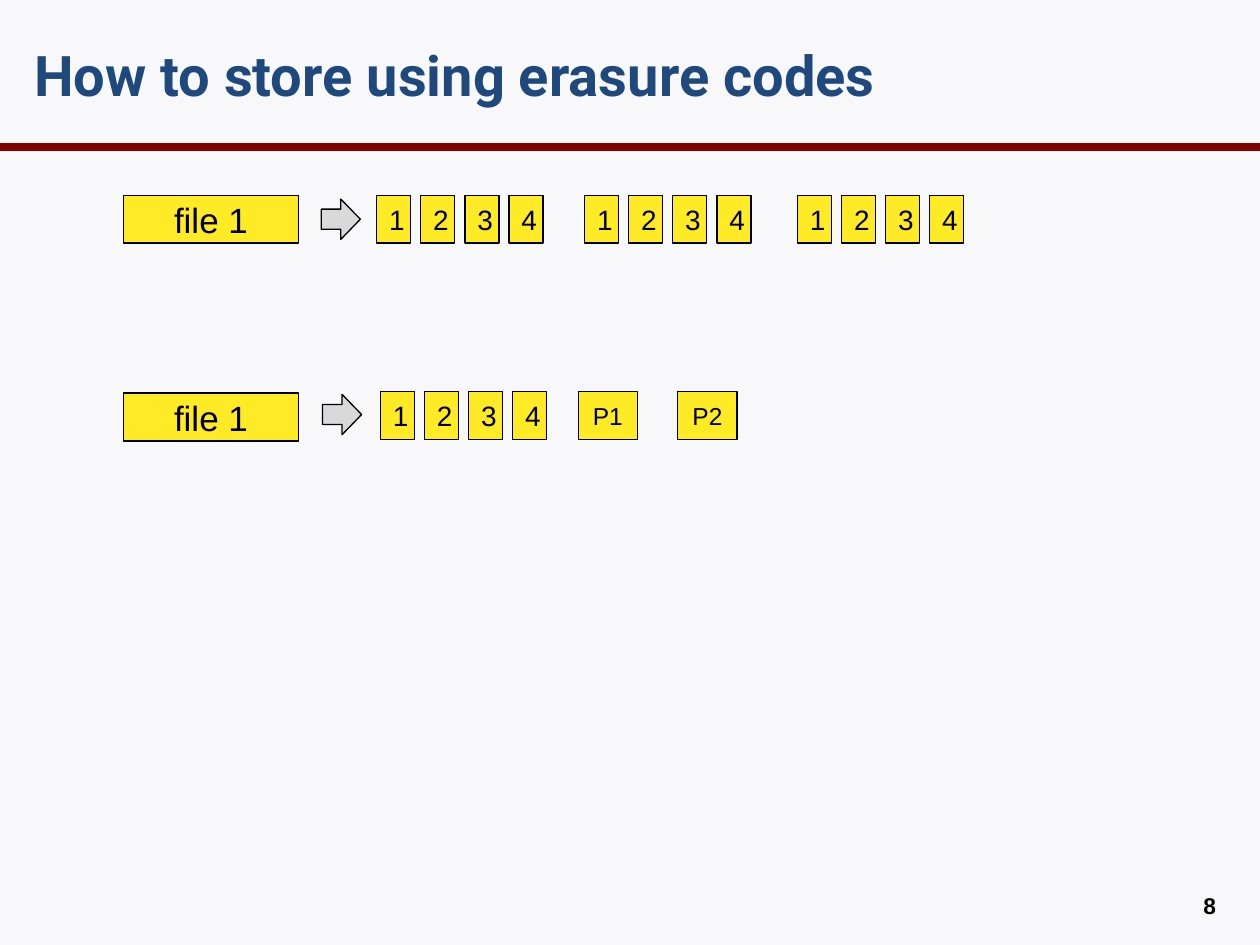
import pptx
import pptx.util
import pptx.dml.color
import pptx.enum.shapes
import pptx.enum.text
from lxml import etree
from pptx.util import Inches, Pt

MSO = pptx.enum.shapes.MSO_SHAPE
ALIGN = pptx.enum.text.PP_ALIGN
ANCHOR = pptx.enum.text.MSO_ANCHOR

TITLE = "How to store using erasure codes"
PAGE = "8"
BLOCKS = ["1", "2", "3", "4"]
# Each row: top of the file box, arrow position, block groups and parity blocks
ROWS = [
    {"file": "file 1", "top": 1.55, "arrow": (2.55, 1.58),
     "groups": [(2.99, 1.55), (4.64, 1.55), (6.33, 1.55)], "parity": []},
    {"file": "file 1", "top": 3.12, "arrow": (2.56, 3.13),
     "groups": [(3.02, 3.11)], "parity": [("P1", 4.59), ("P2", 5.38)]},
]
FILE_LEFT, FILE_W = 0.98, 1.39
BLOCK_W, BLOCK_STEP, PARITY_W, BOX_H = 0.27, 0.35, 0.47, 0.38
PARITY_TOP = 3.11
YELLOW, GREY, BLACK = "FFEA26", "D9D9D9", "000000"
NAVY, MAROON, PAPER = "1F497D", "800000", "F8F8FA"


def rgb(value):
    return pptx.dml.color.RGBColor.from_string(value)


def write(tf, text, size, color, align, font="Arial", bold=False):
    tf.text = text
    p = tf.paragraphs[0]
    p.alignment = align
    f = p.runs[0].font
    f.name, f.size, f.bold = font, Pt(size), bold
    f.color.rgb = rgb(color)


def add_shape(s, kind, left, top, width, height, fill):
    sp = s.shapes.add_shape(kind, Inches(left), Inches(top), Inches(width), Inches(height))
    sp.shadow.inherit = False
    sp.fill.solid()
    sp.fill.fore_color.rgb = rgb(fill)
    sp.line.color.rgb = rgb(BLACK)
    sp.line.width = Pt(0.75)
    return sp


def add_box(s, text, left, top, width, size):
    sp = add_shape(s, MSO.RECTANGLE, left, top, width, BOX_H, YELLOW)
    sp.text_frame.vertical_anchor = ANCHOR.MIDDLE
    write(sp.text_frame, text, size, BLACK, ALIGN.CENTER)


def add_frame(s):
    """Add the background, rule, title and page number."""
    s.background.fill.solid()
    s.background.fill.fore_color.rgb = rgb(PAPER)

    rule = s.shapes.add_connector(pptx.enum.shapes.MSO_CONNECTOR.STRAIGHT,
                                  0, Inches(1.17), Inches(10), Inches(1.17))
    rule.line.color.rgb = rgb(MAROON)
    rule.line.width = Pt(4.5)
    etree.SubElement(rule._element.spPr, pptx.oxml.ns.qn("a:effectLst"))

    title = s.shapes.title
    title.left, title.top = Inches(0.17), Inches(0.17)
    title.width, title.height = Inches(9.56), Inches(0.83)
    title.text_frame.vertical_anchor = ANCHOR.MIDDLE
    write(title.text_frame, TITLE, 32, NAVY, ALIGN.LEFT, "Roboto", True)

    number = s.shapes.add_textbox(Inches(7.42), Inches(7.03), Inches(2.33), Inches(0.27))
    number.text_frame.word_wrap = True
    write(number.text_frame, PAGE, 13, BLACK, ALIGN.RIGHT, bold=True)


def add_row(s, row):
    add_box(s, row["file"], FILE_LEFT, row["top"], FILE_W, 20)
    add_shape(s, MSO.RIGHT_ARROW, *row["arrow"], 0.31, 0.32, GREY)
    for left, top in row["groups"]:
        for i, label in enumerate(BLOCKS):
            add_box(s, label, left + i * BLOCK_STEP, top, BLOCK_W, 16)
    for label, left in row["parity"]:
        add_box(s, label, left, PARITY_TOP, PARITY_W, 14)


def main():
    prs = pptx.Presentation()
    prs.slide_width, prs.slide_height = Inches(10), Inches(7.5)
    s = prs.slides.add_slide(prs.slide_layouts[5])
    add_frame(s)
    for row in ROWS:
        add_row(s, row)
    prs.save("out.pptx")


if __name__ == "__main__":
    main()
